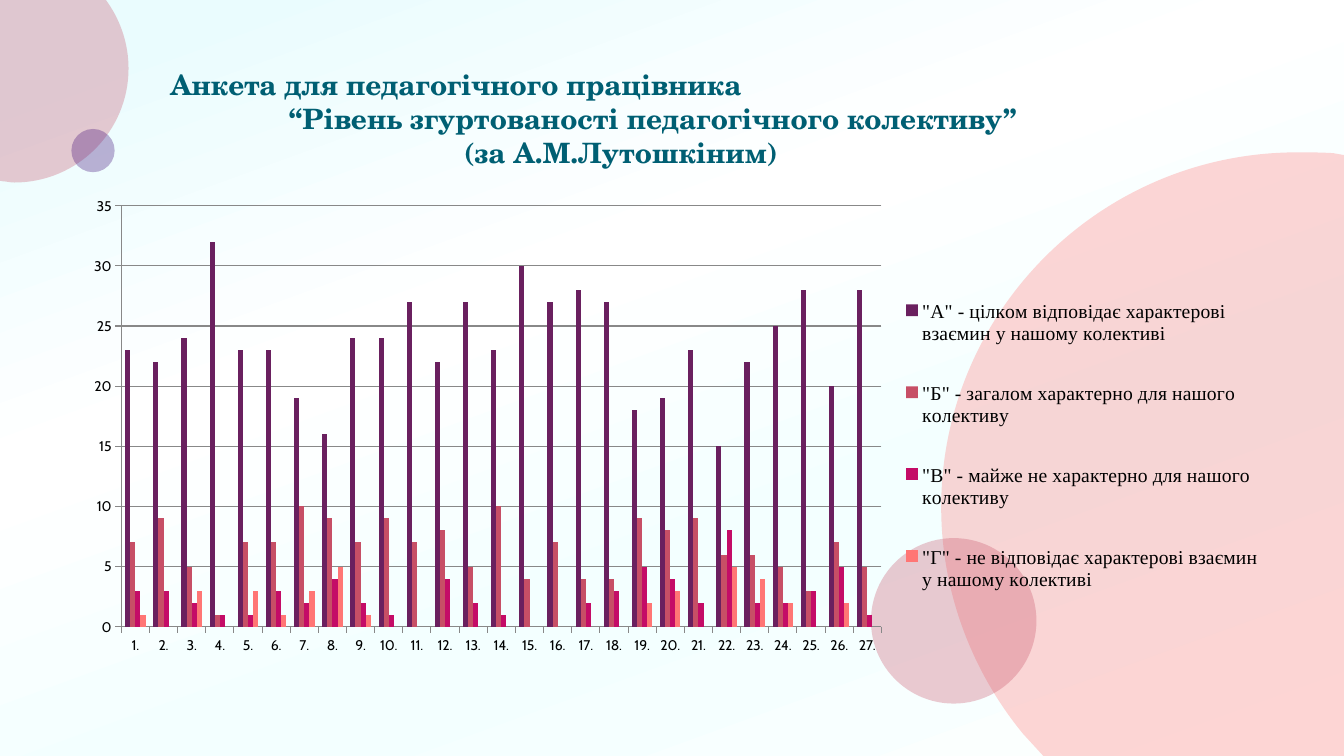
"""Build the survey slide on staff cohesion with its clustered column chart."""
from dataclasses import dataclass

from lxml.etree import SubElement, fromstring
from pptx import Presentation
from pptx.chart.chart import Chart
from pptx.chart.data import CategoryChartData
from pptx.dml.color import RGBColor
from pptx.enum.chart import XL_CHART_TYPE as ChartType, XL_LEGEND_POSITION as LegendPosition
from pptx.enum.chart import XL_TICK_MARK as TickMark
from pptx.enum.shapes import MSO_SHAPE as Preset
from pptx.enum.text import MSO_ANCHOR as Anchor, MSO_AUTO_SIZE as AutoSize, PP_ALIGN as Align
from pptx.oxml.ns import qn
from pptx.shapes.autoshape import Shape
from pptx.slide import Slide
from pptx.util import Cm, Pt

Point = tuple[float, float]
COLOURS = {
    "title": "005F73", "text": "000000", "grid": "888888",
    "plum": "6A205F", "rose": "C74F66", "magenta": "C40C67",
    "coral": "FF7675", "violet": "360070",
}
BACKGROUND = {7: "EAFCFE", 38: "FFFFFF", 66: "F3FFFF", 100: "FDFFFE"}


@dataclass(frozen=True)
class CutBubble:
    """A circle cut by the page edge: a step of one point is a line, of three a curve."""
    colour: str
    start: Point
    steps: tuple[tuple[Point, ...], ...]


@dataclass(frozen=True)
class Bubble:
    colour: str
    left: float
    top: float
    size: float


@dataclass(frozen=True)
class TitleLine:
    text: str
    align: Align
    indent: float


@dataclass(frozen=True)
class Answer:
    name: str
    colour: str
    counts: tuple[int | None, ...]


CUT_BUBBLES = (
    CutBubble("coral", (32.69, 3.84), (
        ((32.99, 3.84), (33.3, 3.84), (33.6, 3.86)),
        ((33.88, 3.91),), ((33.88, 19.1),), ((26.34, 19.1),), ((25.78, 18.49),),
        ((24.51, 16.94), (23.72, 14.94), (23.72, 12.78)),
        ((23.72, 7.85), (27.74, 3.84), (32.69, 3.84)))),
    CutBubble("rose", (-0.03, 0), (
        ((2.67, 0),), ((2.74, 0.1),),
        ((3.05, 0.56), (3.24, 1.12), (3.24, 1.73)),
        ((3.24, 3.3), (1.96, 4.6), (0.36, 4.6)),
        ((0.25, 4.6), (0.15, 4.57), (0.08, 4.57)),
        ((-0.03, 4.55),))),
)
BUBBLES = (
    Bubble("rose", 21.95, 13.56, 4.17),
    Bubble("violet", 1.8, 3.25, 1.09),
)
TITLE = (
    TitleLine("Анкета для педагогічного працівника", Align.LEFT, 0.08),
    TitleLine("“Рівень згуртованості педагогічного колективу”", Align.CENTER, 1.6),
    TitleLine("(за А.М.Лутошкіним)", Align.CENTER, 0),
)
ANSWERS = (
    Answer('"А" - цілком відповідає характерові взаємин у нашому колективі', "plum",
           (23, 22, 24, 32, 23, 23, 19, 16, 24, 24, 27, 22, 27, 23,
            30, 27, 28, 27, 18, 19, 23, 15, 22, 25, 28, 20, 28)),
    Answer('"Б" - загалом характерно для нашого колективу', "rose",
           (7, 9, 5, 1, 7, 7, 10, 9, 7, 9, 7, 8, 5, 10,
            4, 7, 4, 4, 9, 8, 9, 6, 6, 5, 3, 7, 5)),
    Answer('"В" - майже не характерно для нашого колективу', "magenta",
           (3, 3, 2, 1, 1, 3, 2, 4, 2, 1, None, 4, 2, 1,
            None, None, 2, 3, 5, 4, 2, 8, 2, 2, 3, 5, 1)),
    Answer('"Г" - не відповідає характерові взаємин у нашому колективі', "coral",
           (1, None, 3, None, 3, 1, 3, 5, 1, None, None, None, None, None,
            None, None, None, None, 2, 3, None, 5, 4, 2, None, 2, None)),
)


def colour(name: str) -> RGBColor:
    """Look up a named colour."""
    return RGBColor.from_string(COLOURS[name])


def paint_background(page: Slide) -> None:
    """Give the page its four-stop gradient."""
    fill = page.background.fill
    fill.gradient()
    fill.gradient_angle = 290
    stops = next(page.element.iter(qn("a:gsLst")))
    for stop in list(stops):
        stops.remove(stop)
    for percent, value in BACKGROUND.items():
        stop = SubElement(stops, qn("a:gs"), pos=str(percent * 1000))
        SubElement(stop, qn("a:srgbClr"), val=value)


def tint(shape: Shape, name: str) -> None:
    """Fill a shape with a translucent colour and no outline."""
    shape.shadow.inherit = False
    shape.line.fill.background()
    shape.fill.solid()
    shape.fill.fore_color.rgb = colour(name)
    SubElement(next(shape.fill._xPr.iter(qn("a:srgbClr"))), qn("a:alpha"), val="30000")


def draw_cut_bubble(page: Slide, bubble: CutBubble) -> None:
    """Draw a circle that the page edge cuts off, with true curves."""
    points = [(Cm(x), Cm(y)) for step in bubble.steps for x, y in step]
    builder = page.shapes.build_freeform(*map(Cm, bubble.start))
    builder.add_line_segments(points, close=True)
    shape = builder.convert_to_shape()
    segments = iter(list(shape._element.iter(qn("a:lnTo"))))
    for step in bubble.steps:
        parts = [next(segments) for _ in step]
        if len(parts) == 3:
            curve = SubElement(parts[0].getparent(), qn("a:cubicBezTo"))
            parts[0].addprevious(curve)
            for part in parts:
                curve.append(part[0])
                part.getparent().remove(part)
    tint(shape, bubble.colour)


def draw_bubble(page: Slide, bubble: Bubble) -> None:
    """Draw a whole circle."""
    size = Cm(bubble.size)
    shape = page.shapes.add_shape(Preset.OVAL, Cm(bubble.left), Cm(bubble.top), size, size)
    tint(shape, bubble.colour)


def write_title(page: Slide) -> None:
    """Place and format the title placeholder."""
    box = page.shapes.title
    page.shapes._spTree.append(box._element)
    box.left, box.top, box.width, box.height = Cm(3.96), Cm(1.53), Cm(23.37), Cm(2.9)
    frame = box.text_frame
    frame.word_wrap = True
    frame.auto_size = AutoSize.NONE
    frame.vertical_anchor = Anchor.MIDDLE
    for index, line in enumerate(TITLE):
        para = frame.add_paragraph() if index else frame.paragraphs[0]
        para.alignment = line.align
        para.space_before = para.space_after = Pt(0)
        para._p.get_or_add_pPr().set("marL", str(Cm(line.indent)))
        span = para.add_run()
        span.text = line.text
        span.font.name = "TeX Gyre Schola"
        span.font.size = Pt(20)
        span.font.bold = True
        span.font.color.rgb = colour("title")


def set_layout(parent, index: int, target: str, **percents: float) -> None:
    """Fix a chart part at percentages of the chart area."""
    for old in parent.findall(qn("c:layout")):
        parent.remove(old)
    modes = '<c:xMode val="edge"/><c:yMode val="edge"/>'
    sizes = "".join(f'<c:{key} val="{value / 100:.4f}"/>' for key, value in percents.items())
    parent.insert(index, fromstring(
        '<c:layout xmlns:c="http://schemas.openxmlformats.org/drawingml/2006/chart">'
        f"<c:manualLayout>{target}{modes}{sizes}</c:manualLayout></c:layout>"))


def format_axes(chart: Chart) -> None:
    """Style both axes and the gridlines."""
    values = chart.value_axis
    values.minimum_scale, values.maximum_scale, values.major_unit = 0, 35, 5
    values.has_major_gridlines = True
    lines = [values.major_gridlines.format.line]
    for axis in (values, chart.category_axis):
        axis.major_tick_mark = TickMark.OUTSIDE
        axis.minor_tick_mark = TickMark.NONE
        lines.append(axis.format.line)
    for line in lines:
        line.color.rgb = colour("grid")
        line.width = Pt(0.75)


def draw_chart(page: Slide) -> None:
    """Add the column chart of all answers."""
    data = CategoryChartData()
    data.categories = [f"{number}." for number in range(1, 28)]
    for answer in ANSWERS:
        data.add_series(answer.name, answer.counts)
    chart = page.shapes.add_chart(ChartType.COLUMN_CLUSTERED, Cm(1.78), Cm(4.72),
                                  Cm(30.25), Cm(11.96), data).chart
    chart.has_title = False
    chart.font.name, chart.font.size = "Cabin", Pt(10)
    chart.font.color.rgb = colour("text")
    plot = chart.plots[0]
    plot.gap_width, plot.overlap, plot.vary_by_categories = 150, 0, False
    for series, answer in zip(plot.series, ANSWERS):
        series.format.fill.solid()
        series.format.fill.fore_color.rgb = colour(answer.colour)
    format_axes(chart)
    chart.has_legend = True
    legend = chart.legend
    legend.position = LegendPosition.RIGHT
    legend.include_in_layout = False
    legend.font.name, legend.font.size = "Times New Roman", Pt(14)
    legend.font.color.rgb = colour("text")
    set_layout(next(chart._chartSpace.iter(qn("c:plotArea"))), 0,
               '<c:layoutTarget val="inner"/>', x=4.22, y=3.9, w=63.33, h=88.7)
    set_layout(legend._element, 1, "", x=70.3, y=15.9, w=29.5, h=77)


def main() -> None:
    """Assemble and save the deck."""
    deck = Presentation()
    deck.slide_width, deck.slide_height = Cm(33.87), Cm(19.05)
    page = deck.slides.add_slide(deck.slide_layouts[5])
    paint_background(page)
    for cut_bubble in CUT_BUBBLES:
        draw_cut_bubble(page, cut_bubble)
    for bubble in BUBBLES:
        draw_bubble(page, bubble)
    write_title(page)
    draw_chart(page)
    deck.save("out.pptx")


if __name__ == "__main__":
    main()
